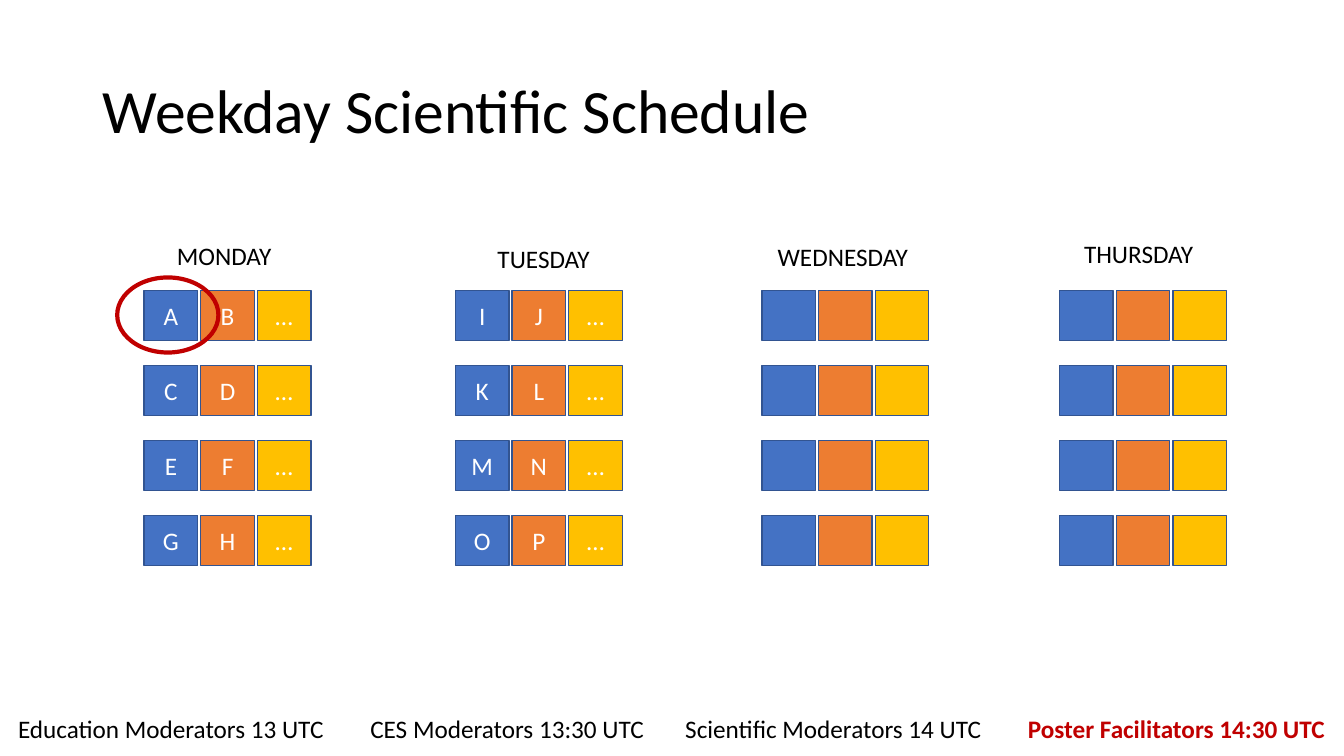
import dataclasses

import pptx
import pptx.dml.color
import pptx.enum.shapes
import pptx.enum.text
import pptx.util

Pt = pptx.util.Pt
Shape = pptx.enum.shapes.MSO_SHAPE
Align = pptx.enum.text.PP_ALIGN
Anchor = pptx.enum.text.MSO_ANCHOR
AutoSize = pptx.enum.text.MSO_AUTO_SIZE


@dataclasses.dataclass(frozen=True)
class Theme:
    font: str = "Calibri"
    title_size: int = 44
    body_size: int = 18
    ink: str = "000000"
    paper: str = "FFFFFF"
    accent: str = "C00000"
    outline: str = "325491"
    tracks: tuple = ("4472C4", "ED7D31", "FFC000")


THEME = Theme()

# Session grid, in points
GRID_TOP = 207.4
CELL_WIDTH, CELL_HEIGHT = 38.2, 36
COLUMN_STEP, ROW_STEP = 40.45, 53.55
ROW_COUNT = 4

# Day, label left, label top, label width, grid left, session letters
DAYS = [
    (" MONDAY", 115.2, 167.8, 94.3, 103, "ABCDEFGH"),
    (" TUESDAY", 344.2, 169.9, 94.3, 325.4, "IJKLMNOP"),
    (" WEDNESDAY", 544.3, 168.5, 113, 544.3, ""),
    (" THURSDAY", 763.2, 167, 113, 756.9, ""),
]

# Role and start time, left, width
ROLES = [
    ("Education Moderators 13 UTC", 5.8, 238.3),
    (" CES Moderators 13:30 UTC", 253.4, 216),
    ("Scientific Moderators 14 UTC", 482.4, 232.6),
    ("Poster Facilitators 14:30 UTC", 727.2, 228.2),
]


def rgb(code):
    return pptx.dml.color.RGBColor.from_string(code)


def write(frame, text, *, size=THEME.body_size, color=THEME.ink, bold=False,
          align=Align.LEFT, anchor=Anchor.TOP, spacing=1.0, wrap=True):
    frame.word_wrap = wrap
    frame.vertical_anchor = anchor
    para = frame.paragraphs[0]
    para.alignment = align
    para.line_spacing = spacing
    span = para.add_run()
    span.text = text
    span.font.name = THEME.font
    span.font.size = Pt(size)
    span.font.bold = bold
    span.font.color.rgb = rgb(color)


def add_label(page, text, left, top, width, **style):
    box = page.shapes.add_textbox(Pt(left), Pt(top), Pt(width), Pt(29))
    write(box.text_frame, text, **style)
    box.text_frame.auto_size = AutoSize.SHAPE_TO_FIT_TEXT


def add_outlined(shapes, kind, left, top, width, height, *, line, weight, fill=None):
    shape = shapes.add_shape(kind, Pt(left), Pt(top), Pt(width), Pt(height))
    shape.shadow.inherit = False
    shape.line.color.rgb = rgb(line)
    shape.line.width = Pt(weight)
    if fill:
        shape.fill.solid()
        shape.fill.fore_color.rgb = rgb(fill)
    else:
        shape.fill.background()
    return shape


def add_title(page, text):
    title = page.shapes.title
    title.left, title.top, title.width, title.height = Pt(66), Pt(28.8), Pt(828), Pt(104.4)
    write(title.text_frame, text, size=THEME.title_size, anchor=Anchor.MIDDLE, spacing=0.9)


def add_sessions(page, left, letters):
    """Draw one day's grid: a group per track, letters running across the rows."""
    for column, fill in enumerate(THEME.tracks):
        track = page.shapes.add_group_shape()
        for row in range(ROW_COUNT):
            cell = add_outlined(
                track.shapes, Shape.RECTANGLE,
                left + column * COLUMN_STEP, GRID_TOP + row * ROW_STEP,
                CELL_WIDTH, CELL_HEIGHT, line=THEME.outline, weight=1, fill=fill)
            if letters:
                text = letters[2 * row + column] if column < 2 else "…"
                write(cell.text_frame, text, color=THEME.paper,
                      align=Align.CENTER, anchor=Anchor.MIDDLE)


def main():
    deck = pptx.Presentation()
    deck.slide_width, deck.slide_height = Pt(960), Pt(540)
    page = deck.slides.add_slide(deck.slide_layouts[5])
    add_title(page, "Weekday Scientific Schedule")

    # Days with their sessions
    for name, label_left, label_top, label_width, grid_left, letters in DAYS:
        add_sessions(page, grid_left, letters)
        add_label(page, name, label_left, label_top, label_width)

    # Ring around the first session
    add_outlined(page.shapes, Shape.OVAL, 83.7, 198.2, 72.3, 53.6,
                 line=THEME.accent, weight=3)

    # Roles along the bottom, the last one highlighted
    for role, left, width in ROLES:
        highlighted = role.startswith("Poster")
        add_label(page, role, left, 506.2, width, wrap=False, bold=highlighted,
                  color=THEME.accent if highlighted else THEME.ink)

    deck.save("out.pptx")


if __name__ == "__main__":
    main()
